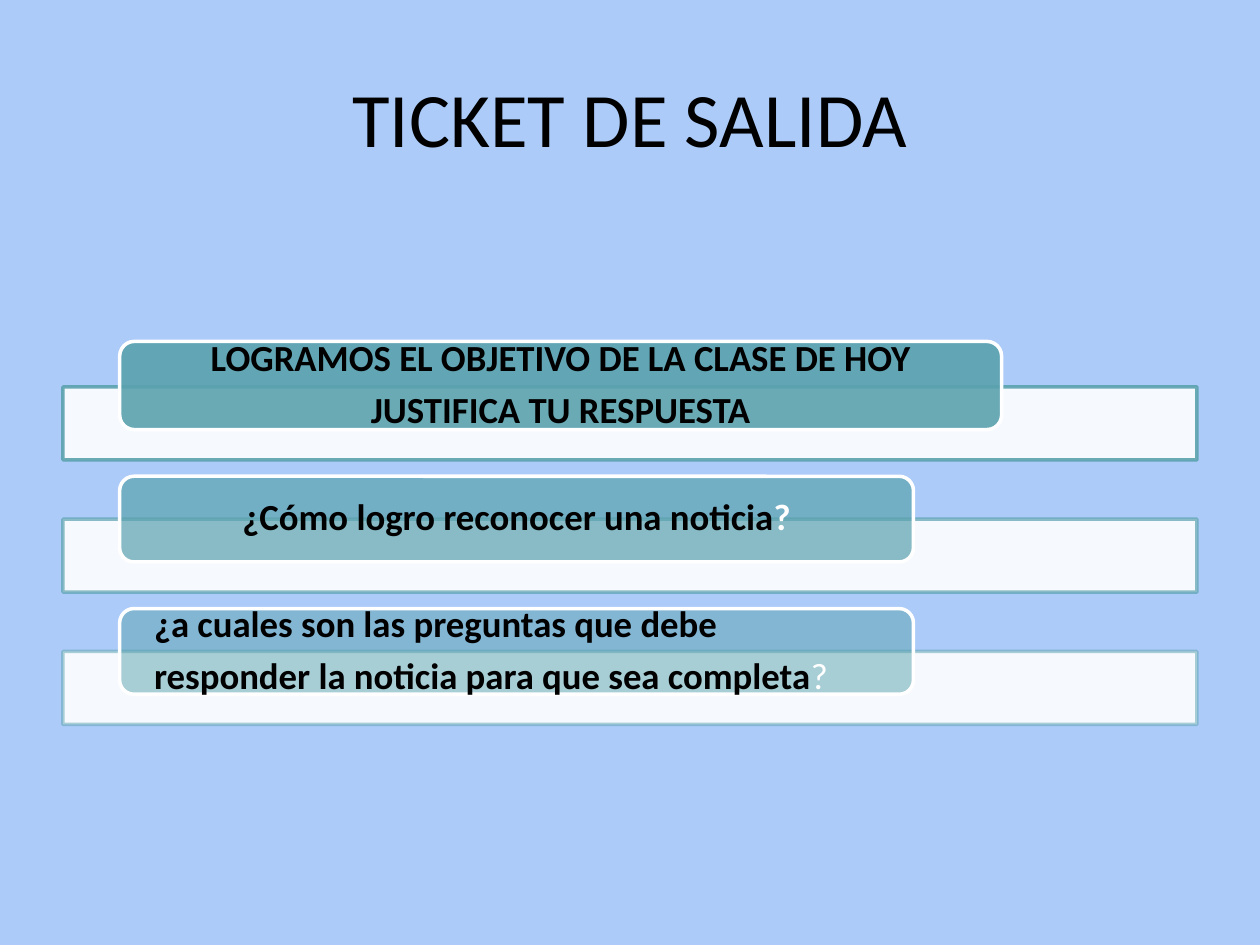
from lxml import etree
from pptx import Presentation
from pptx.dml.color import RGBColor
from pptx.enum.shapes import MSO_SHAPE as SHAPE
from pptx.enum.text import MSO_ANCHOR as ANCHOR, PP_ALIGN as ALIGN
from pptx.oxml.ns import qn
from pptx.util import Inches, Pt

SKY = RGBColor(0xAC, 0xCB, 0xF9)
TEAL = RGBColor(0x5A, 0xA2, 0xAE)
WHITE = RGBColor(0xFF, 0xFF, 0xFF)
BLACK = RGBColor(0x00, 0x00, 0x00)

BAR_HEIGHT = 0.58
FIRST_BAR_TOP = 3.07
BAR_PITCH = 1.05
LABEL_OVERLAP = 0.34

QUESTIONS = [
    (7, 0.7, 90, ALIGN.CENTER, [
        [("LOGRAMOS EL OBJETIVO DE LA CLASE DE HOY", {})],
        [("JUSTIFICA TU RESPUESTA", {})],
    ]),
    (6.3, 0.68, 70, ALIGN.CENTER, [
        [("¿Cómo logro reconocer una noticia", {}), ("?", {"color": WHITE})],
    ]),
    (6.3, 0.68, 50, ALIGN.LEFT, [
        [("¿a cuales son las preguntas que debe", {})],
        [("responder la noticia para que sea completa", {}),
         ("?", {"color": WHITE, "bold": False})],
    ]),
]


def add_run(p, text, size=21, color=BLACK, bold=True):
    r = p.add_run()
    r.text = text
    r.font.name = "Calibri"
    r.font.size = Pt(size)
    r.font.bold = bold
    r.font.color.rgb = color


def set_opacity(fill_format, parent, percent):
    color = parent.find(qn("a:solidFill")).find(qn("a:srgbClr"))
    etree.SubElement(color, qn("a:alpha"), val=str(percent * 1000))


def add_box(slide, kind, box, fill, opacity, line, line_opacity=100):
    sp = slide.shapes.add_shape(kind, *map(Inches, box))
    sp.shadow.inherit = False
    sp.fill.solid()
    sp.fill.fore_color.rgb = fill
    sp.line.color.rgb = line
    sp.line.width = Pt(2)
    props = sp.fill._xPr
    set_opacity(sp.fill, props, opacity)
    set_opacity(sp.line, props.find(qn("a:ln")), line_opacity)
    return sp


def add_title(slide, text):
    tf = slide.shapes.add_textbox(*map(Inches, (0.5, 0.3, 9, 1.25))).text_frame
    tf.word_wrap = True
    tf.vertical_anchor = ANCHOR.MIDDLE
    p = tf.paragraphs[0]
    p.alignment = ALIGN.CENTER
    add_run(p, text, size=44, bold=False)


def write_label(sp, paragraphs, align):
    tf = sp.text_frame
    tf.word_wrap = True
    tf.vertical_anchor = ANCHOR.MIDDLE
    tf.margin_left = tf.margin_right = Inches(0.24)
    tf.margin_top = tf.margin_bottom = 0
    for i, runs in enumerate(paragraphs):
        p = tf.add_paragraph() if i else tf.paragraphs[0]
        p.alignment = align
        p.line_spacing = 0.9
        p.space_after = Pt(7.35)
        for text, style in runs:
            add_run(p, text, **style)


def add_question(slide, top, width, height, opacity, align, paragraphs):
    add_box(slide, SHAPE.RECTANGLE, (0.5, top, 9, BAR_HEIGHT),
            WHITE, 90, TEAL, opacity)
    label_top = top + LABEL_OVERLAP - height
    sp = add_box(slide, SHAPE.ROUNDED_RECTANGLE,
                 (0.95, label_top, width, height), TEAL, opacity, WHITE)
    write_label(sp, paragraphs, align)


def main():
    prs = Presentation()
    prs.slide_width, prs.slide_height = Inches(10), Inches(7.5)
    slide = prs.slides.add_slide(prs.slide_layouts[6])
    slide.background.fill.solid()
    slide.background.fill.fore_color.rgb = SKY
    add_title(slide, "TICKET DE SALIDA")
    for i, question in enumerate(QUESTIONS):
        add_question(slide, FIRST_BAR_TOP + i * BAR_PITCH, *question)
    prs.save("out.pptx")


if __name__ == "__main__":
    main()
